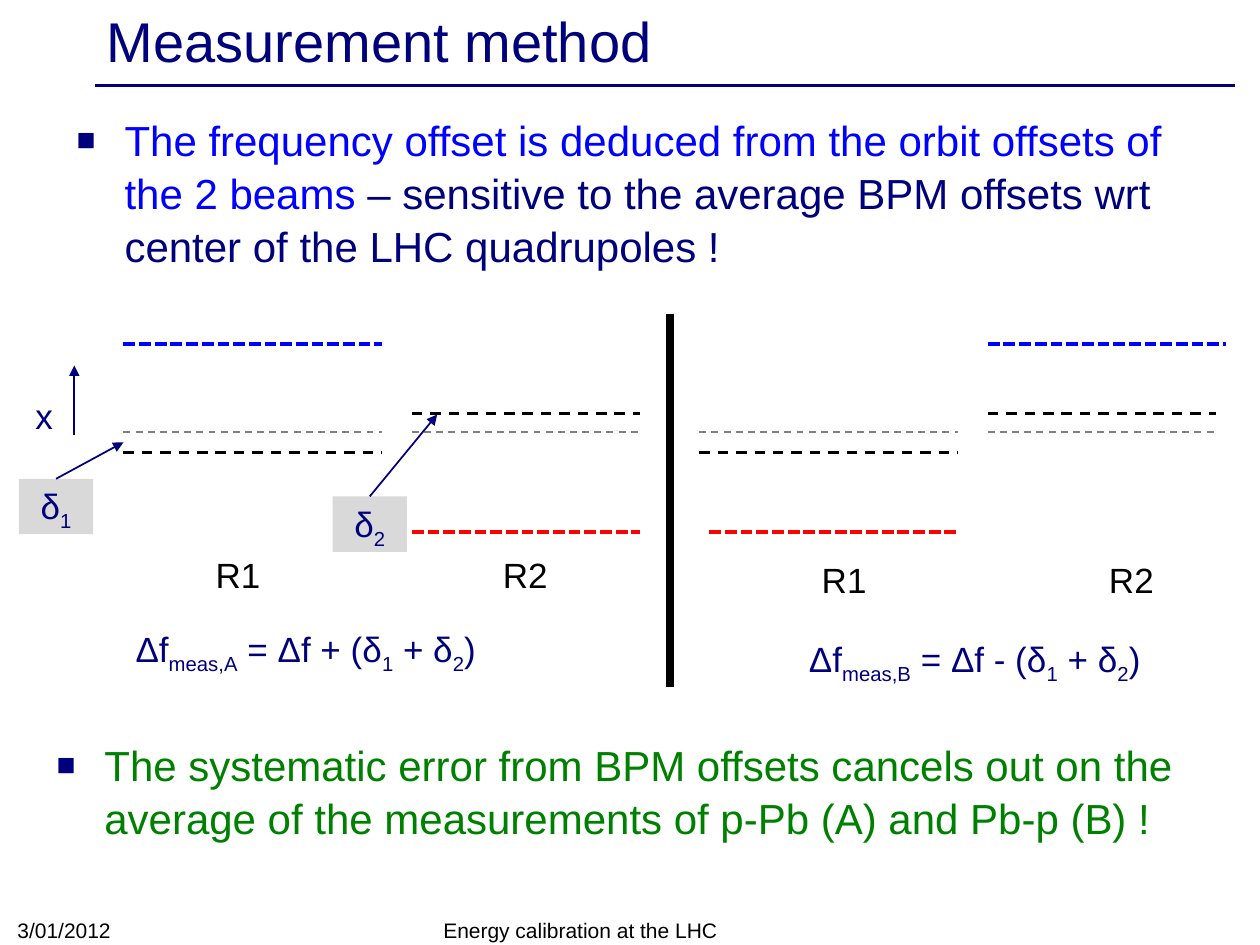
from lxml.etree import SubElement
from pptx import Presentation
from pptx.dml.color import RGBColor
from pptx.enum.dml import MSO_LINE_DASH_STYLE as Dash
from pptx.enum.shapes import MSO_CONNECTOR as Connector, MSO_SHAPE as Shape
from pptx.enum.text import MSO_ANCHOR as Anchor, PP_ALIGN as Align
from pptx.oxml.ns import qn
from pptx.util import Inches, Pt

NAVY = RGBColor(0x00, 0x00, 0x7D)
BLUE = RGBColor(0x00, 0x00, 0xFF)
RED = RGBColor(0xFF, 0x00, 0x00)
GREEN = RGBColor(0x00, 0x80, 0x00)
BLACK = RGBColor(0x00, 0x00, 0x00)
GREY = RGBColor(0x80, 0x80, 0x80)
LIGHT = RGBColor(0xD9, 0xD9, 0xD9)

COLUMNS, ROWS = 100, 75
TOP_SIDE = 0


class SlideBuilder:
    """Holds the style and the current slide; lengths are grid columns and rows."""

    font_name = "Arial"
    label_size = 20
    body_size = 24

    def __init__(self, presentation):
        self.column = presentation.slide_width / COLUMNS
        self.row = presentation.slide_height / ROWS
        self.slide = presentation.slides.add_slide(presentation.slide_layouts[6])

    def place(self, *lengths):
        units = (self.column, self.row) * 2
        return [round(length * unit) for length, unit in zip(lengths, units)]

    def fill_text(self, shape, runs, size, align=Align.LEFT, anchor=Anchor.TOP, wrap=True):
        """Fill a shape with one paragraph of (text, colour, is_subscript) runs."""
        frame = shape.text_frame
        frame.word_wrap = wrap
        frame.vertical_anchor = anchor
        paragraph = frame.paragraphs[0]
        paragraph.alignment = align
        for text, colour, is_subscript in runs:
            run = paragraph.add_run()
            run.text = text
            run.font.name = self.font_name
            run.font.size = Pt(size)
            run.font.color.rgb = colour
            if is_subscript:
                run.font._element.set("baseline", "-25000")
        return paragraph

    def text(self, box, runs, size, **layout):
        shape = self.slide.shapes.add_textbox(*self.place(*box))
        return self.fill_text(shape, runs, size, **layout)

    def label(self, box, text, colour):
        self.text(box, [(text, colour, False)], self.label_size,
                  align=Align.CENTER, wrap=False)

    def formula(self, box, parts):
        self.text(box, subscripted(parts), self.label_size, align=Align.CENTER)

    def bullet(self, box, runs):
        paragraph = self.text(box, runs, self.body_size)
        paragraph.line_spacing = 1.05
        properties = paragraph._p.get_or_add_pPr()
        properties.set("marL", str(Inches(0.38)))
        properties.set("indent", str(-Inches(0.38)))
        colour = SubElement(properties, qn("a:buClr"))
        SubElement(colour, qn("a:srgbClr"), val=str(NAVY))
        SubElement(properties, qn("a:buSzPct"), val="75000")
        SubElement(properties, qn("a:buFont"), typeface=self.font_name)
        SubElement(properties, qn("a:buChar"), char="■")

    def line(self, start, end, colour, width, dash=None, arrow=False):
        connector = self.slide.shapes.add_connector(
            Connector.STRAIGHT, *self.place(*start, *end))
        connector.line.color.rgb = colour
        connector.line.width = Pt(width)
        if dash:
            connector.line.dash_style = dash
        if arrow:
            SubElement(connector.line._get_or_add_ln(), qn("a:tailEnd"), type="triangle")
        SubElement(connector._element.spPr, qn("a:effectLst"))
        return connector

    def level(self, span, row, colour, width, dash=Dash.DASH):
        """Draw a horizontal dashed orbit line over a (left, right) span."""
        left, right = span
        self.line((left, row), (right, row), colour, width, dash)

    def offset_tag(self, left, top, index, tip):
        """Draw a grey delta tag with an arrow to the offset it names."""
        width, height = 5.9, 4.4
        tag = self.slide.shapes.add_shape(
            Shape.RECTANGLE, *self.place(left, top, width, height))
        tag.shadow.inherit = False
        tag.fill.solid()
        tag.fill.fore_color.rgb = LIGHT
        tag.line.fill.background()
        self.fill_text(tag, subscripted(["δ", index]), self.label_size, align=Align.CENTER)
        arrow = self.line((left + width / 2, top), tip, NAVY, 1, arrow=True)
        arrow.begin_connect(tag, TOP_SIDE)


def subscripted(parts):
    """Turn alternating normal and subscript strings into navy runs."""
    return [(text, NAVY, position % 2 == 1) for position, text in enumerate(parts)]


def main():
    presentation = Presentation()
    presentation.slide_width, presentation.slide_height = Inches(10), Inches(7.5)
    builder = SlideBuilder(presentation)

    # Title and rule
    builder.line((7.5, 6.8), (98, 6.8), NAVY, 2)
    builder.text((7.5, 0.3, 90, 5.7), [("Measurement method", NAVY, False)], 32,
                 anchor=Anchor.MIDDLE)

    # Footer
    for box, text in [((34.2, 72.5, 31.7, 2.8), "Energy calibration at the LHC"),
                      ((0.4, 72.4, 23.3, 2.9), "3/01/2012")]:
        builder.text(box, [(text, BLACK, False)], 12, anchor=Anchor.BOTTOM)

    # Statements above and below the diagram
    builder.bullet((5.1, 8.4, 92.1, 13.4), [
        ("The frequency offset is deduced from the orbit offsets of the 2 beams ",
         BLUE, False),
        ("– sensitive to the average BPM offsets wrt center of the LHC quadrupoles !",
         NAVY, False)])
    builder.bullet((3.5, 58, 92.1, 10.2), [
        ("The systematic error from BPM offsets cancels out on the average of the "
         "measurements of p-Pb (A) and Pb-p (B) !", GREEN, False)])

    # Reference and offset levels, the same in both panels
    for shift in (0, 45.7):
        ring_1 = (9.8 + shift, 30.3 + shift)
        ring_2 = (32.7 + shift, 50.8 + shift)
        for ring, offset_row in [(ring_1, 35.9), (ring_2, 32.8)]:
            builder.level(ring, 34.3, GREY, 1)
            builder.level(ring, offset_row, BLACK, 1.5)

    # Beam orbits, swapped between the panels
    for span in [(9.8, 30.3), (78.4, 97.3)]:
        builder.level(span, 27.3, BLUE, 2.25, Dash.SQUARE_DOT)
    for span in [(32.7, 50.8), (56.3, 76)]:
        builder.level(span, 42.2, RED, 2.25, Dash.SQUARE_DOT)

    # Panel divider and ring labels
    builder.line((53.2, 24.9), (53.2, 54.5), BLACK, 4.5)
    for left, top in [(16.1, 43.4), (64.2, 43.8)]:
        for index, text in enumerate(["R1", "R2"]):
            builder.label((left + 22.8 * index, top, 5.6, 4.4), text, BLACK)

    # Axis and offset tags
    builder.line((5.9, 34.5), (5.9, 29), NAVY, 1, arrow=True)
    builder.label((1.8, 30.8, 3.4, 4.4), "x", NAVY)
    builder.offset_tag(1.5, 38, "1", (9.8, 35.1))
    builder.offset_tag(26.4, 39.4, "2", (34.7, 32.9))

    # Measured frequency offsets
    for left, top, beam, sign in [(7.5, 49.3, "A", "+"), (60.6, 50.1, "B", "-")]:
        builder.formula((left, top, 34.3, 4.4), [
            "Δf", f"meas,{beam}", f" = Δf {sign} (δ", "1", " + δ", "2", ") "])

    presentation.save("out.pptx")


if __name__ == "__main__":
    main()
